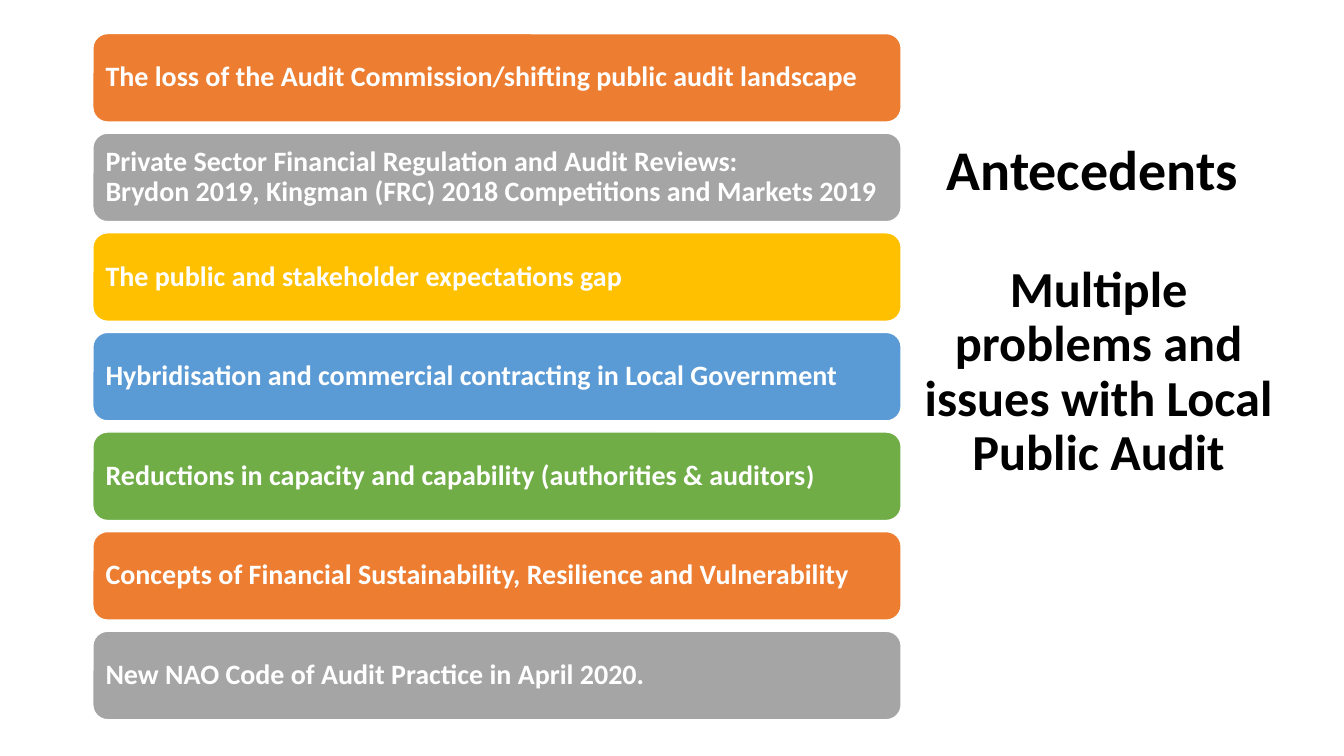
from dataclasses import dataclass

import pptx
import pptx.dml.color
import pptx.enum.shapes
import pptx.enum.text
import pptx.util

Pt = pptx.util.Pt
Align = pptx.enum.text.PP_ALIGN


@dataclass(frozen=True)
class Theme:
    font: str = "Calibri"
    white: str = "FFFFFF"
    black: str = "000000"
    accents: tuple[str, ...] = ("ED7D31", "A5A5A5", "FFC000", "5B9BD5", "70AD47")
    heading: float = 40
    subheading: float = 36
    bar: float = 20
    bracket: float = 19


@dataclass(frozen=True)
class Antecedent:
    text: str
    closing: str = ""  # ending set in the slightly smaller size


THEME = Theme()

ANTECEDENTS = [
    Antecedent("The loss of the Audit Commission/shifting public audit landscape"),
    Antecedent("Private Sector Financial Regulation and Audit Reviews:\v"
               "Brydon 2019, Kingman (FRC) 2018 Competitions and Markets 2019"),
    Antecedent("The public and stakeholder expectations gap"),
    Antecedent("Hybridisation and commercial contracting in Local Government"),
    Antecedent("Reductions in capacity and capability (authorities & auditors", ")"),
    Antecedent("Concepts of Financial Sustainability, Resilience and Vulnerability"),
    Antecedent("New NAO Code of Audit Practice in April 2020."),
]

# Bar stack, in points
BAR_LEFT, BAR_TOP = 66.3, 24
BAR_WIDTH, BAR_HEIGHT = 577.4, 63.2
BAR_PITCH = 71.15
BAR_INSET = 6


def rgb(value: str) -> pptx.dml.color.RGBColor:
    return pptx.dml.color.RGBColor.from_string(value)


def add_text(p, text: str, *, size: float, color: str, align=Align.LEFT,
             before: float = 0) -> None:
    """Append bold text to a paragraph; a vertical tab breaks the line."""
    p.alignment = align
    p.line_spacing = 0.9
    p.space_before = Pt(before)
    for i, line in enumerate(text.split("\v")):
        if i:
            p.add_line_break()
        r = p.add_run()
        r.text = line
        r.font.name = THEME.font
        r.font.size = Pt(size)
        r.font.bold = True
        r.font.color.rgb = rgb(color)


def set_frame(tf, *, side: float, top: float, bottom: float) -> None:
    tf.word_wrap = True
    tf.vertical_anchor = pptx.enum.text.MSO_ANCHOR.MIDDLE
    tf.margin_left = tf.margin_right = Pt(side)
    tf.margin_top, tf.margin_bottom = Pt(top), Pt(bottom)


def add_bar(s, index: int, item: Antecedent) -> None:
    sp = s.shapes.add_shape(
        pptx.enum.shapes.MSO_SHAPE.ROUNDED_RECTANGLE,
        Pt(BAR_LEFT), Pt(BAR_TOP + index * BAR_PITCH), Pt(BAR_WIDTH), Pt(BAR_HEIGHT))
    sp.shadow.inherit = False
    sp.fill.solid()
    sp.fill.fore_color.rgb = rgb(THEME.accents[index % len(THEME.accents)])
    sp.line.color.rgb = rgb(THEME.white)
    sp.line.width = Pt(1)
    tf = sp.text_frame
    set_frame(tf, side=BAR_INSET, top=BAR_INSET, bottom=BAR_INSET)
    p = tf.paragraphs[0]
    add_text(p, item.text, size=THEME.bar, color=THEME.white)
    if item.closing:
        add_text(p, item.closing, size=THEME.bracket, color=THEME.white)


def add_title(s) -> None:
    sp = s.shapes.add_textbox(Pt(652.3), Pt(43.2), Pt(265), Pt(439.2))
    tf = sp.text_frame
    # The deep bottom inset lifts the title above the middle
    set_frame(tf, side=7.2, top=3.6, bottom=84)
    add_text(tf.paragraphs[0], "Antecedents ", size=THEME.heading,
             color=THEME.black, align=Align.CENTER)
    add_text(tf.add_paragraph(), "Multiple problems and issues with Local Public Audit",
             size=THEME.subheading, color=THEME.black, align=Align.CENTER, before=44)


def main() -> None:
    prs = pptx.Presentation()
    prs.slide_width, prs.slide_height = Pt(960), Pt(540)
    s = prs.slides.add_slide(prs.slide_layouts[6])

    # Title on the right
    add_title(s)

    # Stack of antecedents on the left
    for index, item in enumerate(ANTECEDENTS):
        add_bar(s, index, item)

    prs.save("out.pptx")


if __name__ == "__main__":
    main()
